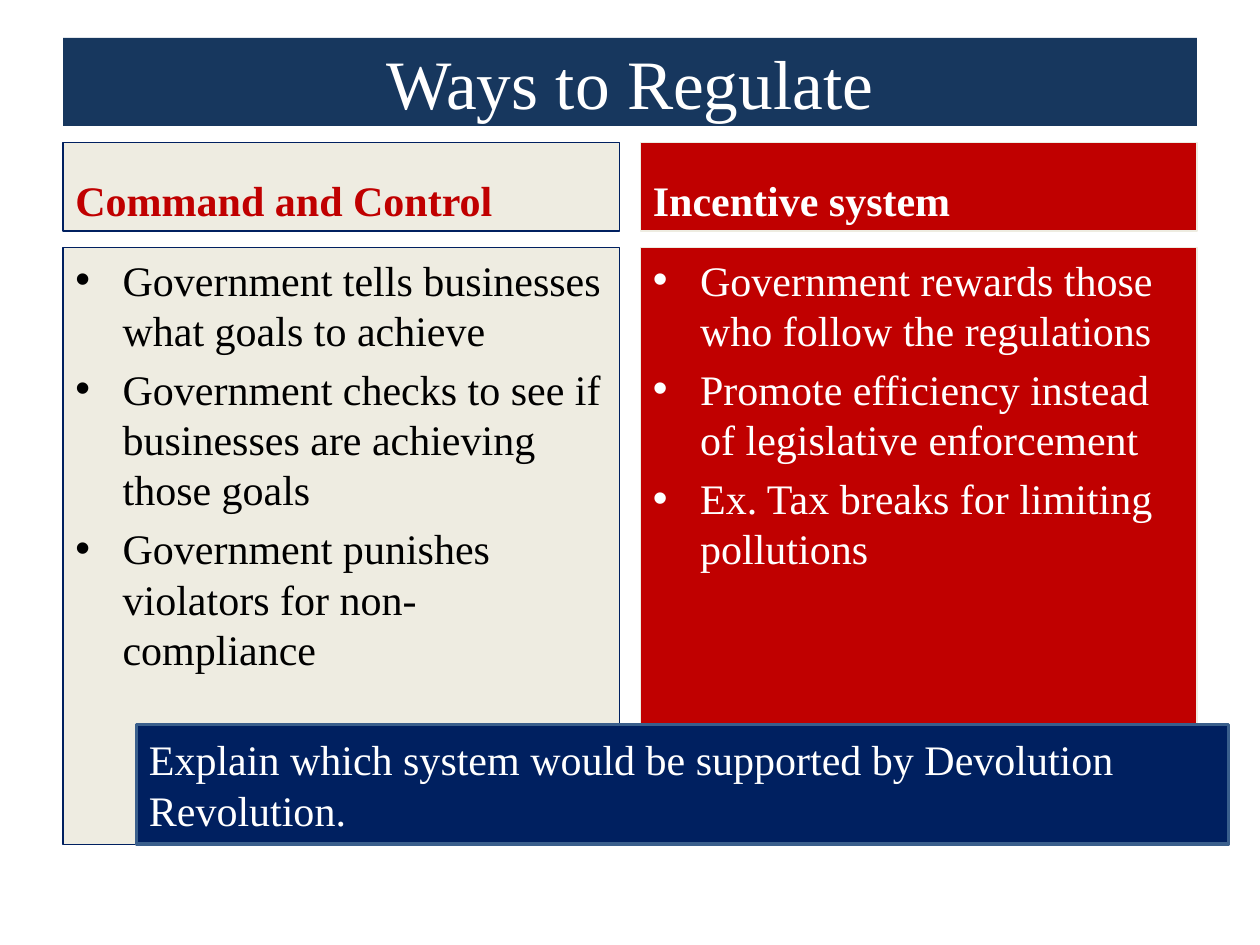
from lxml.etree import SubElement
from pptx import Presentation
from pptx.dml.color import RGBColor
from pptx.enum.shapes import MSO_SHAPE
from pptx.enum.text import MSO_ANCHOR, PP_ALIGN
from pptx.oxml.ns import qn
from pptx.util import Pt

COLORS = {
    "title": "17375E",
    "navy": "002060",
    "edge": "3A5F8C",
    "cream": "EEECE1",
    "red": "C00000",
    "white": "FFFFFF",
    "black": "000000",
}


def write_panel(panel, text, fill, color, line=None, line_width=0.75, size=24,
                bold=False, bullets=False, anchor=MSO_ANCHOR.TOP, align=PP_ALIGN.LEFT):
    panel.fill.solid()
    panel.fill.fore_color.rgb = RGBColor.from_string(COLORS[fill])
    if line:
        panel.line.color.rgb = RGBColor.from_string(COLORS[line])
        panel.line.width = Pt(line_width)
    frame = panel.text_frame
    frame.word_wrap = True
    frame.vertical_anchor = anchor
    frame.text = text
    for index, paragraph in enumerate(frame.paragraphs):
        paragraph.alignment = align
        paragraph.space_before = Pt(4.8 if index else 0)
        if bullets:
            properties = paragraph._p.get_or_add_pPr()
            properties.set("marL", str(Pt(27)))
            properties.set("indent", str(-Pt(27)))
            SubElement(properties, qn("a:buFont"), typeface="Arial")
            SubElement(properties, qn("a:buChar"), char="•")
        for font in [paragraph.font] + [run.font for run in paragraph.runs]:
            font.name = "Times New Roman"
            font.size = Pt(size)
            font.bold = bold
            font.color.rgb = RGBColor.from_string(COLORS[color])


presentation = Presentation()
presentation.slide_width = Pt(720)
presentation.slide_height = Pt(540)
slide = presentation.slides.add_slide(presentation.slide_layouts[5])

title = slide.shapes.title
title.left, title.top, title.width, title.height = Pt(36), Pt(21.6), Pt(648), Pt(50.4)
write_panel(title, "Ways to Regulate", fill="title", color="white", size=39.6,
            anchor=MSO_ANCHOR.MIDDLE, align=PP_ALIGN.CENTER)

systems = [
    ("Command and Control", "cream", "navy", "red", "black", [
        "Government tells businesses what goals to achieve",
        "Government checks to see if businesses are achieving those goals",
        "Government punishes violators for non-compliance",
    ]),
    ("Incentive system", "red", "cream", "white", "white", [
        "Government rewards those who follow the regulations",
        "Promote efficiency instead of legislative enforcement",
        "Ex. Tax breaks for limiting pollutions",
    ]),
]
column_width = 318
column_step = 648 - column_width

for column, (system, fill, line, heading_color, point_color, points) in enumerate(systems):
    left = 36 + column * column_step
    heading = slide.shapes.add_shape(
        MSO_SHAPE.RECTANGLE, Pt(left), Pt(81.6), Pt(column_width), Pt(50.4))
    heading.shadow.inherit = False
    write_panel(heading, system, fill=fill, line=line, color=heading_color,
                bold=True, anchor=MSO_ANCHOR.BOTTOM)

    details = slide.shapes.add_shape(
        MSO_SHAPE.RECTANGLE, Pt(left), Pt(141.6), Pt(column_width), Pt(340.8))
    details.shadow.inherit = False
    write_panel(details, "\n".join(points), fill=fill, line=line, color=point_color,
                bullets=True)

question = slide.shapes.add_shape(
    MSO_SHAPE.RECTANGLE, Pt(78), Pt(414), Pt(624), Pt(68.4))
question.shadow.inherit = False
write_panel(question, "Explain which system would be supported by Devolution Revolution.",
            fill="navy", line="edge", line_width=2, color="white",
            anchor=MSO_ANCHOR.MIDDLE)

presentation.save("out.pptx")
